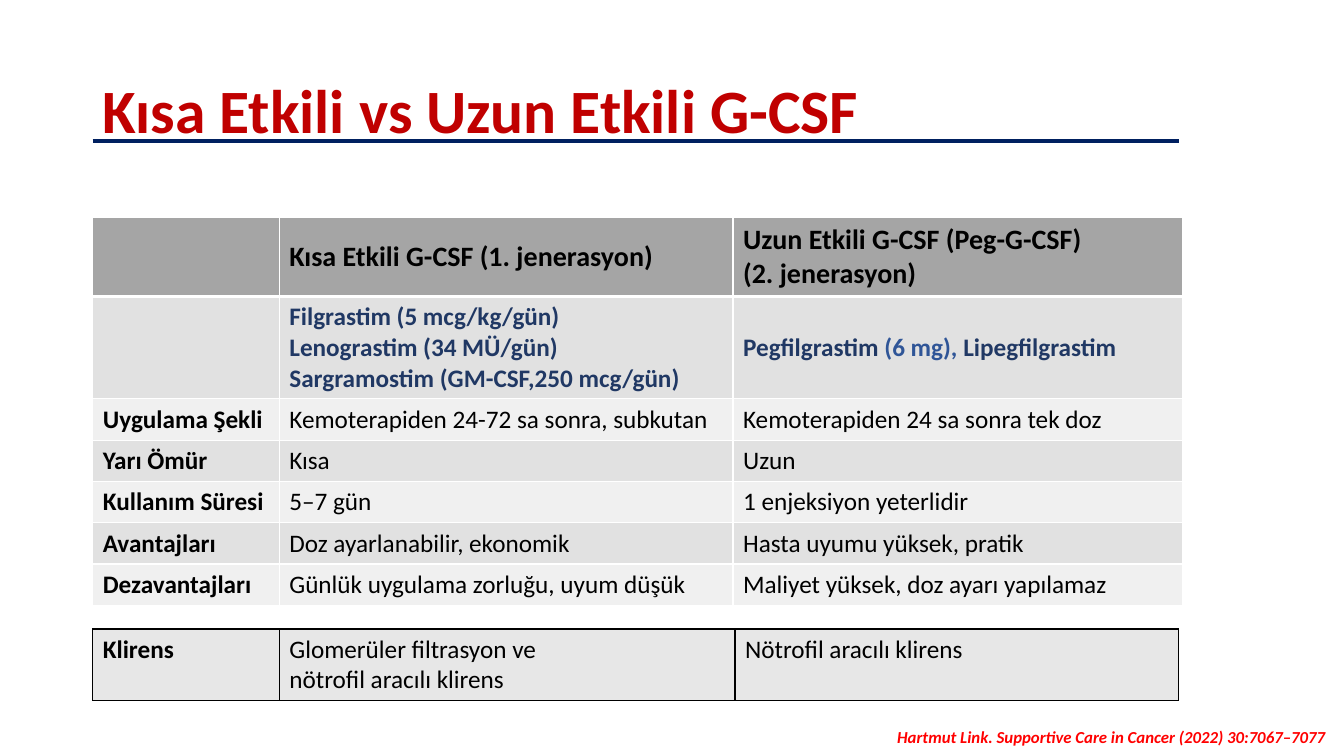
import pptx
import pptx.util
import pptx.dml.color
import pptx.enum.shapes
import pptx.enum.text
import pptx.oxml
import pptx.oxml.ns
from dataclasses import dataclass

Inches = pptx.util.Inches
ANCHOR = pptx.enum.text.MSO_ANCHOR


@dataclass(frozen=True)
class Theme:
    font: str = "Calibri"
    title: str = "C00000"
    rule: str = "002060"
    text: str = "000000"
    drug: str = "203864"
    dose: str = "2F5597"
    source: str = "FF0000"
    white: str = "FFFFFF"
    header_fill: str = "A5A5A5"
    odd_fill: str = "E1E1E1"
    even_fill: str = "F0F0F0"
    clearance_fill: str = "E7E7E7"
    title_size: int = 44
    header_size: int = 20
    body_size: int = 18
    source_size: int = 12


THEME = Theme()

# Content: a cell is a list of paragraphs
TITLE = "Kısa Etkili vs Uzun Etkili G-CSF"
HEADER = [[], ["Kısa Etkili G-CSF (1. jenerasyon)"],
          ["Uzun Etkili G-CSF (Peg-G-CSF)", "(2. jenerasyon)"]]
DRUGS = [[], ["Filgrastim (5 mcg/kg/gün)", "Lenograstim (34 MÜ/gün)",
              "Sargramostim (GM-CSF,250 mcg/gün)"],
         [[("Pegfilgrastim ", THEME.drug), ("(6 mg), ", THEME.dose),
           ("Lipegfilgrastim", THEME.drug)]]]
FEATURES = [
    ("Uygulama Şekli", "Kemoterapiden 24-72 sa sonra, subkutan",
     "Kemoterapiden 24 sa sonra tek doz"),
    ("Yarı Ömür", "Kısa", "Uzun"),
    ("Kullanım Süresi", "5–7 gün", "1 enjeksiyon yeterlidir"),
    ("Avantajları", "Doz ayarlanabilir, ekonomik", "Hasta uyumu yüksek, pratik"),
    ("Dezavantajları", "Günlük uygulama zorluğu, uyum düşük",
     "Maliyet yüksek, doz ayarı yapılamaz"),
]
CLEARANCE = [["Klirens"], ["Glomerüler filtrasyon ve", "nötrofil aracılı klirens"],
             ["Nötrofil aracılı klirens"]]
SOURCE = "Hartmut Link. Supportive Care in Cancer (2022) 30:7067–7077"

# Layout, in inches
LEFT = 0.92
RULE_Y, RULE_END = 1.4, 11.69
COMPARISON_TOP, COMPARISON_COLUMNS = 2.16, (1.85, 4.5, 4.46)
COMPARISON_ROWS = [0.77, 1.01] + [0.41] * len(FEATURES)
CLEARANCE_TOP, CLEARANCE_COLUMNS = 6.24, (1.85, 4.52, 4.4)


def rgb(color):
    return pptx.dml.color.RGBColor.from_string(color)


def add_run(paragraph, text, size, color, bold=True, italic=False):
    run = paragraph.add_run()
    run.text = text
    run.font.name = THEME.font
    run.font.size = pptx.util.Pt(size)
    run.font.color.rgb = rgb(color)
    run.font.bold = bold
    run.font.italic = italic


def fill_cell(cell, paragraphs, size, color, bold, anchor):
    cell.vertical_anchor = anchor
    for index, content in enumerate(paragraphs):
        frame = cell.text_frame
        paragraph = frame.add_paragraph() if index else frame.paragraphs[0]
        pieces = [(content, color)] if isinstance(content, str) else content
        for text, piece_color in pieces:
            add_run(paragraph, text, size, piece_color, bold)


def paint_cell(cell, fill, border, top=1, bottom=1):
    properties = cell._tc.get_or_add_tcPr()
    for side, width in (("L", 1), ("R", 1), ("T", top), ("B", bottom)):
        properties.append(pptx.oxml.parse_xml(
            f'<a:ln{side} {pptx.oxml.ns.nsdecls("a")} w="{pptx.util.Pt(width)}">'
            f'<a:solidFill><a:srgbClr val="{border}"/></a:solidFill></a:ln{side}>'))
    cell.fill.solid()
    cell.fill.fore_color.rgb = rgb(fill)


def add_grid(slide, top, columns, rows):
    table = slide.shapes.add_table(
        len(rows), len(columns), Inches(LEFT), Inches(top),
        Inches(sum(columns)), Inches(sum(rows))).table
    table.horz_banding = False
    table.first_row = False
    for column, width in zip(table.columns, columns):
        column.width = Inches(width)
    for row, height in zip(table.rows, rows):
        row.height = Inches(height)
    return table


def add_title(slide):
    title = slide.shapes.title
    title.left, title.top = Inches(LEFT), Inches(0.4)
    title.width, title.height = Inches(11.5), Inches(1.45)
    frame = title.text_frame
    frame.auto_size = pptx.enum.text.MSO_AUTO_SIZE.NONE
    frame.vertical_anchor = ANCHOR.MIDDLE
    paragraph = frame.paragraphs[0]
    paragraph.alignment = pptx.enum.text.PP_ALIGN.LEFT
    paragraph.line_spacing = 0.9
    add_run(paragraph, TITLE, THEME.title_size, THEME.title)

    rule = slide.shapes.add_connector(
        pptx.enum.shapes.MSO_CONNECTOR.STRAIGHT, Inches(LEFT), Inches(RULE_Y),
        Inches(RULE_END), Inches(RULE_Y))
    rule.line.color.rgb = rgb(THEME.rule)
    rule.line.width = pptx.util.Pt(3)
    rule._element.spPr.append(pptx.oxml.parse_xml(
        f'<a:effectLst {pptx.oxml.ns.nsdecls("a")}/>'))


def add_comparison(slide):
    table = add_grid(slide, COMPARISON_TOP, COMPARISON_COLUMNS, COMPARISON_ROWS)
    rows = [HEADER, DRUGS] + [[[text] for text in feature] for feature in FEATURES]
    for r, row in enumerate(rows):
        size = THEME.body_size if r else THEME.header_size
        color = THEME.drug if r == 1 else THEME.text
        fill = (THEME.odd_fill if r % 2 else THEME.even_fill) if r else THEME.header_fill
        for c, paragraphs in enumerate(row):
            cell = table.cell(r, c)
            fill_cell(cell, paragraphs, size, color, r < 2 or c == 0, ANCHOR.MIDDLE)
            paint_cell(cell, fill, THEME.white, top=3 if r == 1 else 1,
                       bottom=3 if r == 0 else 1)


def add_clearance(slide):
    table = add_grid(slide, CLEARANCE_TOP, CLEARANCE_COLUMNS, [0.7])
    for c, paragraphs in enumerate(CLEARANCE):
        cell = table.cell(0, c)
        fill_cell(cell, paragraphs, THEME.body_size, THEME.text, c == 0, ANCHOR.TOP)
        paint_cell(cell, THEME.clearance_fill, THEME.text)


def add_source(slide):
    source = slide.shapes.add_textbox(
        Inches(8.8), Inches(7.16), Inches(4.53), Inches(0.3))
    source.text_frame.word_wrap = True
    add_run(source.text_frame.paragraphs[0], SOURCE, THEME.source_size,
            THEME.source, italic=True)


def main():
    deck = pptx.Presentation()
    deck.slide_width, deck.slide_height = Inches(13.33), Inches(7.5)
    slide = deck.slides.add_slide(deck.slide_layouts[5])
    add_title(slide)
    add_comparison(slide)
    add_clearance(slide)
    add_source(slide)
    deck.save("out.pptx")


if __name__ == "__main__":
    main()
